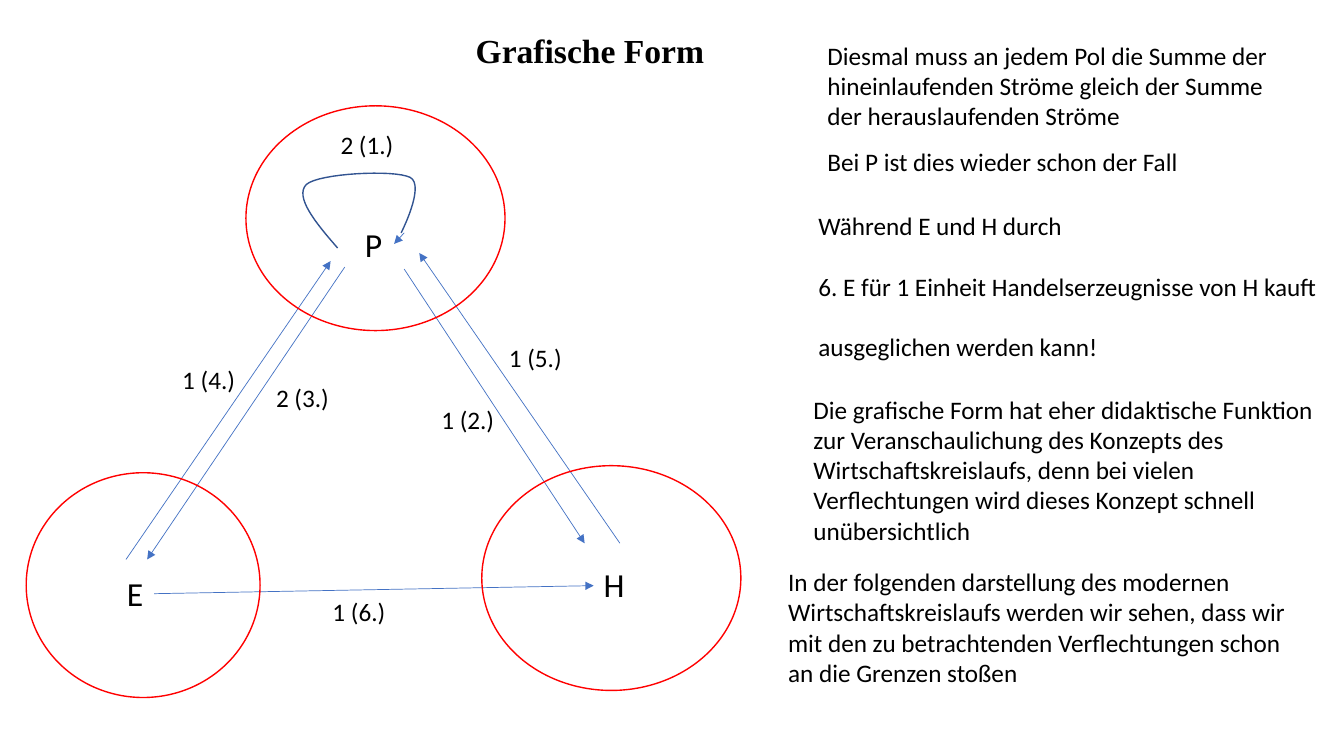
"""Build the slide showing the economic circuit in graphical form."""
import dataclasses

import lxml.etree
import pptx
import pptx.dml.color
import pptx.enum.shapes
import pptx.enum.text
import pptx.oxml.ns
import pptx.shapes.connector
import pptx.shapes.shapetree
import pptx.util

Point = tuple[float, float]
Box = tuple[float, float, float, float]
Shapes = pptx.shapes.shapetree._BaseGroupShapes


@dataclasses.dataclass(frozen=True)
class Theme:
    ink: str = "000000"
    pole: str = "FF0000"
    flow: str = "4472C4"
    loop: str = "325491"
    heading_font: str = "Times New Roman"
    body_font: str = "Calibri"
    large: float = 24
    body: float = 18
    paragraph_gap: float = 21.6
    outline: float = 1
    flow_width: float = 0.5


@dataclasses.dataclass(frozen=True)
class Pole:
    name: str
    name_box: Box
    ring: Box


@dataclasses.dataclass(frozen=True)
class Flow:
    start: Point
    end: Point
    label: str
    label_at: Point


@dataclasses.dataclass(frozen=True)
class Remark:
    box: Box
    paragraphs: tuple[str, ...]


THEME = Theme()
COLUMNS, ROWS = 133.33, 75
CELL = pptx.util.Inches(0.1)
LABEL_SIZE = (7.3, 4)
HEADING_BOX = (46.2, 2.4, 70.5, 5.1)

POLES = (
    Pole("P", (35.2, 21.7, 3.9, 5), (24.4, 10.5, 25.7, 22.3)),
    Pole("H", (58.9, 55.5, 4.1, 5), (47.8, 46.2, 25.7, 22.3)),
    Pole("E", (11.6, 56.3, 3.7, 5), (2.6, 46.9, 23.2, 22.3)),
)
OWN_USE = Flow((40.1, 23.1), (39.1, 24.2), "2 (1.)", (32.8, 12.3))
OWN_USE_START = (33.5, 24.6)
OWN_USE_CURVES = (
    ((31.3, 22.1), (29.2, 19.5), (30.4, 18.3)),
    ((31.6, 17.2), (39.1, 16.8), (40.7, 17.6)),
    ((42.2, 18.4), (39.8, 23.1), (39.8, 23.1)),
)
FLOWS = (
    Flow((40.1, 26.7), (58, 53.9), "1 (2.)", (42.8, 39.6)),
    Flow((34.2, 26.5), (14.6, 55.5), "2 (3.)", (26.4, 37.4)),
    Flow((12.5, 55.5), (32.8, 25.9), "1 (4.)", (17.1, 35.7)),
    Flow((61.5, 53.9), (41.6, 25.1), "1 (5.)", (49.5, 33.5)),
    Flow((15.3, 58.9), (58.9, 58.1), "1 (6.)", (32, 58.7)),
)
REMARKS = (
    Remark((81.1, 3.5, 49.2, 10.6), (
        "Diesmal muss an jedem Pol die Summe der hineinlaufenden Ströme "
        "gleich der Summe der herauslaufenden Ströme",)),
    Remark((81.1, 14, 48.5, 4.5), ("Bei P ist dies wieder schon der Fall",)),
    Remark((80.2, 20.4, 53.1, 16.6), (
        "Während E und H durch",
        "6. E für 1 Einheit Handelserzeugnisse von H kauft",
        "ausgeglichen werden kann!")),
    Remark((79.7, 38.6, 53.1, 16.6), (
        "Die grafische Form hat eher didaktische Funktion zur "
        "Veranschaulichung des Konzepts des Wirtschaftskreislaufs, denn bei "
        "vielen Verflechtungen wird dieses Konzept schnell unübersichtlich",)),
    Remark((77.2, 55.7, 53.1, 16.6), (
        "In der folgenden darstellung des modernen Wirtschaftskreislaufs "
        "werden wir sehen, dass wir mit den zu betrachtenden Verflechtungen "
        "schon an die Grenzen stoßen",)),
)


def cells(*counts: float) -> list[int]:
    return [round(count * CELL) for count in counts]


def rgb(code: str) -> pptx.dml.color.RGBColor:
    return pptx.dml.color.RGBColor.from_string(code)


def write(shapes: Shapes, box: Box, paragraphs: tuple[str, ...], size: float,
          font: str = THEME.body_font, bold: bool = False,
          wrap: bool = True) -> pptx.text.text.TextFrame:
    frame = shapes.add_textbox(*cells(*box)).text_frame
    frame.word_wrap = wrap
    if not wrap:
        frame.auto_size = pptx.enum.text.MSO_AUTO_SIZE.SHAPE_TO_FIT_TEXT
    for index, wording in enumerate(paragraphs):
        paragraph = frame.add_paragraph() if index else frame.paragraphs[0]
        if index:
            paragraph.space_before = pptx.util.Pt(THEME.paragraph_gap)
        run = paragraph.add_run()
        run.text = wording
        run.font.name = font
        run.font.size = pptx.util.Pt(size)
        run.font.bold = bold
        run.font.color.rgb = rgb(THEME.ink)
    return frame


def draw_arrow(shapes: Shapes, flow: Flow) -> None:
    arrow = shapes.add_connector(pptx.enum.shapes.MSO_CONNECTOR.STRAIGHT,
                                 *cells(*flow.start, *flow.end))
    arrow.line.color.rgb = rgb(THEME.flow)
    arrow.line.width = pptx.util.Pt(THEME.flow_width)
    qn = pptx.oxml.ns.qn
    properties = arrow._element.spPr
    lxml.etree.SubElement(properties.find(qn("a:ln")), qn("a:tailEnd"),
                          type="triangle")
    lxml.etree.SubElement(properties, qn("a:effectLst"))


def label_flow(shapes: Shapes, flow: Flow) -> None:
    write(shapes, (*flow.label_at, *LABEL_SIZE), (flow.label,), THEME.body,
          wrap=False)


def outline(shape: pptx.shapes.autoshape.Shape, color: str) -> None:
    shape.shadow.inherit = False
    shape.fill.background()
    shape.line.color.rgb = rgb(color)
    shape.line.width = pptx.util.Pt(THEME.outline)


def curve_points(start: Point, curve: tuple[Point, Point, Point],
                 steps: int = 16) -> list[Point]:
    points = []
    for step in range(1, steps + 1):
        t = step / steps
        weights = ((1 - t) ** 3, 3 * t * (1 - t) ** 2,
                   3 * t ** 2 * (1 - t), t ** 3)
        points.append(tuple(
            sum(weight * anchor[axis]
                for weight, anchor in zip(weights, (start, *curve)))
            for axis in (0, 1)))
    return points


def draw_own_use(shapes: Shapes) -> None:
    group = shapes.add_group_shape().shapes
    loop = group.build_freeform(*cells(*OWN_USE_START))
    start = OWN_USE_START
    for curve in OWN_USE_CURVES:
        loop.add_line_segments(
            [tuple(cells(*point)) for point in curve_points(start, curve)],
            close=False)
        start = curve[-1]
    outline(loop.convert_to_shape(), THEME.loop)
    draw_arrow(group, OWN_USE)
    label_flow(shapes, OWN_USE)


def main() -> None:
    deck = pptx.Presentation()
    deck.slide_width, deck.slide_height = cells(COLUMNS, ROWS)
    shapes = deck.slides.add_slide(deck.slide_layouts[6]).shapes
    heading = write(shapes, HEADING_BOX, ("Grafische Form",), THEME.large,
                    THEME.heading_font, bold=True)
    heading.vertical_anchor = pptx.enum.text.MSO_ANCHOR.MIDDLE
    for pole in POLES:
        write(shapes, pole.name_box, (pole.name,), THEME.large, wrap=False)
    draw_own_use(shapes)
    for flow in FLOWS:
        draw_arrow(shapes, flow)
    for pole in POLES:
        outline(shapes.add_shape(pptx.enum.shapes.MSO_SHAPE.OVAL,
                                 *cells(*pole.ring)), THEME.pole)
    for flow in FLOWS:
        label_flow(shapes, flow)
    for remark in REMARKS:
        write(shapes, remark.box, remark.paragraphs, THEME.body)
    deck.save("out.pptx")


if __name__ == "__main__":
    main()
